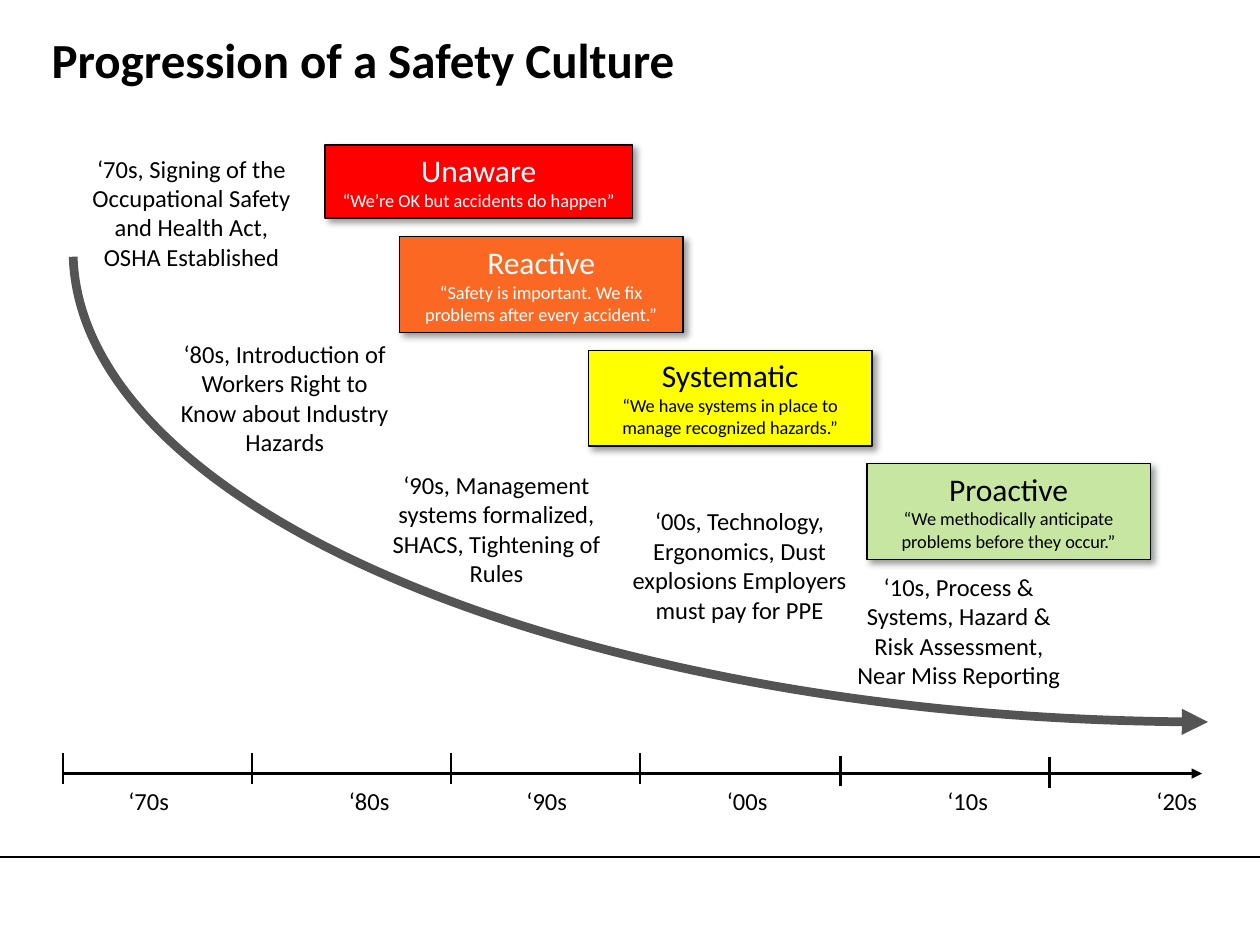
from dataclasses import dataclass

from lxml import etree
from pptx import Presentation
from pptx.dml.color import RGBColor
from pptx.enum.shapes import MSO_CONNECTOR, MSO_SHAPE
from pptx.enum.text import MSO_ANCHOR, MSO_AUTO_SIZE, PP_ALIGN
from pptx.oxml import parse_xml
from pptx.oxml.ns import nsdecls, qn
from pptx.util import Inches, Pt

STRAIGHT = MSO_CONNECTOR.STRAIGHT
ARC, RECTANGLE = MSO_SHAPE.ARC, MSO_SHAPE.RECTANGLE
LEFT, CENTER = PP_ALIGN.LEFT, PP_ALIGN.CENTER
TOP, MIDDLE = MSO_ANCHOR.TOP, MSO_ANCHOR.MIDDLE
GROW, FIXED = MSO_AUTO_SIZE.SHAPE_TO_FIT_TEXT, MSO_AUTO_SIZE.NONE


@dataclass(frozen=True)
class Theme:
    font: str = "Calibri"
    ink: str = "000000"
    light: str = "FFFFFF"
    curve: str = "545454"
    unaware: str = "FF0000"
    reactive: str = "FB6823"
    systematic: str = "FFFF00"
    proactive: str = "C6E6A2"
    title_size: float = 28
    stage_size: float = 18
    body_size: float = 14
    quote_size: float = 10.5


THEME = Theme()

# Offsets in inches from the region's left edge: tick, tick drop, label, decade
DECADES = [
    (0, 0, 0.42, "‘70s"),
    (1.5, 0, 2.17, "‘80s"),
    (3.08, 0, 3.58, "‘90s"),
    (4.58, 0, 5.17, "‘00s"),
    (6.17, 0.02, 6.92, "‘10s"),
    (7.83, 0.03, 8.58, "‘20s"),
]

# Left, top, width, event
MILESTONES = [
    (0, 0, 1.88, "‘70s, Signing of the Occupational Safety and Health Act, OSHA Established"),
    (0.71, 1.47, 1.94, "‘80s, Introduction of Workers Right to Know about Industry Hazards"),
    (2.35, 2.51, 2.02, "‘90s, Management systems formalized, SHACS, Tightening of Rules"),
    (4.25, 2.8, 2.08, "‘00s, Technology, Ergonomics, Dust explosions Employers must pay for PPE"),
    (6.09, 3.32, 1.88, "‘10s, Process & Systems, Hazard & Risk Assessment, Near Miss Reporting"),
]

# Left, top, width, height, fill, text colour, stage, quote
STAGES = [
    (0, 0, 2.44, 0.58, THEME.unaware, THEME.light,
     "Unaware", "“We’re OK but accidents do happen”"),
    (0.59, 0.73, 2.25, 0.76, THEME.reactive, THEME.light,
     "Reactive", "“Safety is important. We fix problems after every accident.”"),
    (2.09, 1.63, 2.25, 0.76, THEME.systematic, THEME.ink,
     "Systematic", "“We have systems in place to manage recognized hazards.”"),
    (4.3, 2.53, 2.25, 0.76, THEME.proactive, THEME.ink,
     "Proactive", "“We methodically anticipate problems before they occur.”"),
]


def write(shape, *lines, sizes=(THEME.body_size,), color=THEME.ink, bold=False,
          align=LEFT, anchor=TOP, fit=GROW):
    """Fill a shape with one paragraph per line, each in its own size."""
    frame = shape.text_frame
    frame.word_wrap = True
    frame.auto_size = fit
    frame.vertical_anchor = anchor
    frame.text = "\n".join(lines)
    for paragraph, size in zip(frame.paragraphs, sizes):
        paragraph.alignment = align
        font = paragraph.font
        font.name, font.size, font.bold = THEME.font, Pt(size), bold
        font.color.rgb = RGBColor.from_string(color)


def style_line(line, color, width):
    line.color.rgb = RGBColor.from_string(color)
    line.width = Pt(width)


def add_arrowhead(line, end):
    """Put a triangle on the "headEnd" or "tailEnd" of a line."""
    etree.SubElement(line.fill._xPr, qn(f"a:{end}"), type="triangle")


def draw_line(slide, x1, y1, x2, y2, width=1.5):
    connector = slide.shapes.add_connector(
        STRAIGHT, Inches(x1), Inches(y1), Inches(x2), Inches(y2))
    style_line(connector.line, THEME.ink, width)
    etree.SubElement(connector._element.spPr, qn("a:effectLst"))
    return connector


def add_box(slide, left, top, width, height):
    return slide.shapes.add_textbox(
        Inches(left), Inches(top), Inches(width), Inches(height))


def cast_shadow(shape):
    shape._element.spPr.append(parse_xml(
        f'<a:effectLst {nsdecls("a")}>'
        f'<a:outerShdw blurRad="{Pt(4)}" dist="{Pt(3)}" dir="2700000" algn="tl" rotWithShape="0">'
        f'<a:srgbClr val="{THEME.ink}"><a:alpha val="40000"/></a:srgbClr>'
        '</a:outerShdw></a:effectLst>'))


def place_title(slide, left, top, width, height):
    title = slide.shapes.title
    title.left, title.top = Inches(left), Inches(top)
    title.width, title.height = Inches(width), Inches(height)
    write(title, "Progression of a Safety Culture", sizes=(THEME.title_size,),
          bold=True, anchor=MIDDLE, fit=FIXED)


def draw_curve(slide, left, top, width, height):
    """Draw the lower left quarter of an ellipse that fills the box."""
    curve = slide.shapes.add_shape(
        ARC, Inches(left), Inches(top), Inches(width), Inches(height))
    curve.rotation = 180
    for index, degrees in enumerate((270.5, 359.7)):
        curve.adjustments[index] = degrees * 0.6
    curve.fill.background()
    style_line(curve.line, THEME.curve, 5)
    add_arrowhead(curve.line, "headEnd")
    curve.shadow.inherit = False


def draw_timeline(slide, left, top, width):
    axis = draw_line(slide, left, top + 0.16, left + width, top + 0.16)
    add_arrowhead(axis.line, "tailEnd")
    for tick, drop, label, decade in DECADES:
        x, y = left + tick, top + drop
        draw_line(slide, x, y, x, y + 0.24)
        write(add_box(slide, left + label, top + 0.21, 0.58, 0.34), decade)


def place_milestones(slide, left, top):
    for x, y, width, event in MILESTONES:
        write(add_box(slide, left + x, top + y, width, 1.04), event, align=CENTER)


def place_stages(slide, left, top):
    for x, y, width, height, fill, color, stage, quote in STAGES:
        card = slide.shapes.add_shape(
            RECTANGLE, Inches(left + x), Inches(top + y), Inches(width), Inches(height))
        card.fill.solid()
        card.fill.fore_color.rgb = RGBColor.from_string(fill)
        style_line(card.line, THEME.ink, 0.75)
        cast_shadow(card)
        write(card, stage, quote, sizes=(THEME.stage_size, THEME.quote_size),
              color=color, align=CENTER)


def main():
    deck = Presentation()
    deck.slide_width, deck.slide_height = Inches(10), Inches(7.5)
    slide = deck.slides.add_slide(deck.slide_layouts.get_by_name("Title Only"))
    draw_line(slide, 0, 6.8, 10, 6.8, width=1)
    place_title(slide, 0.31, 0.25, 8.62, 0.44)
    draw_curve(slide, 0.58, -1.75, 18.08, 7.48)
    draw_timeline(slide, 0.5, 5.98, 9.04)
    place_milestones(slide, 0.58, 1.17)
    place_stages(slide, 2.58, 1.15)
    deck.save("out.pptx")


if __name__ == "__main__":
    main()
